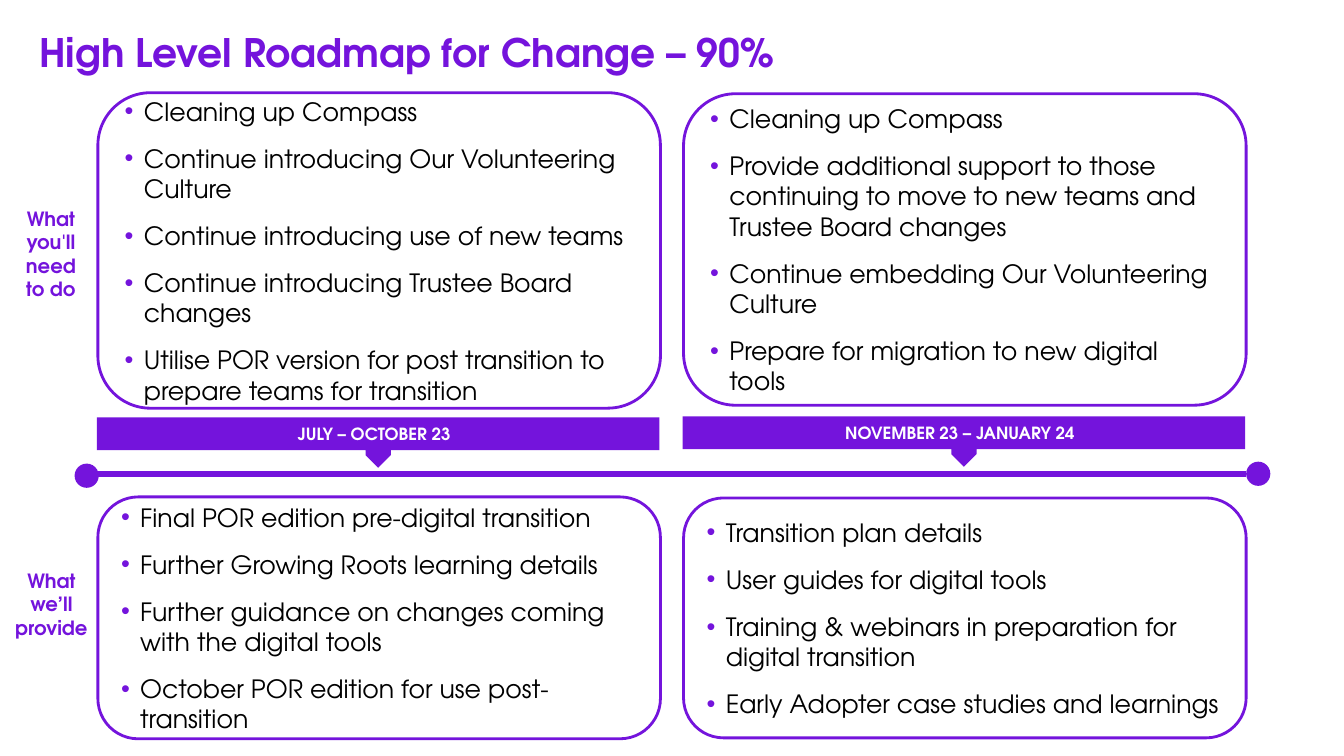
from dataclasses import dataclass

from lxml.etree import SubElement
from pptx import Presentation
from pptx.dml.color import RGBColor
from pptx.enum.shapes import MSO_CONNECTOR, MSO_SHAPE
from pptx.enum.text import MSO_ANCHOR, MSO_AUTO_SIZE, PP_ALIGN
from pptx.oxml.ns import qn
from pptx.util import Inches, Pt

SLIDE_WIDTH = Inches(13.33)
SLIDE_HEIGHT = Inches(7.5)
FONT = "TeX Gyre Adventor"
PURPLE = "7414DC"
HEADING = "7413DC"
BLACK = "000000"
WHITE = "FFFFFF"
COLUMNS = (7.28, 50.86)
COLUMN_WIDTH = 41.86
CORNER_INSET = 0.05


@dataclass(frozen=True)
class Area:
    """Left, top, width and height as percentages of the slide."""

    left: float
    top: float
    width: float
    height: float

    def emu(self) -> tuple[int, int, int, int]:
        return (
            across(self.left),
            down(self.top),
            across(self.width),
            down(self.height),
        )


@dataclass(frozen=True)
class Card:
    column: int
    top: float
    height: float
    items: tuple[str, ...]


@dataclass(frozen=True)
class Period:
    column: int
    top: float
    text: str


@dataclass(frozen=True)
class RowLabel:
    area: Area
    text: str


CARDS = (
    Card(0, 12.27, 41.73, (
        "Cleaning up Compass",
        "Continue introducing Our Volunteering Culture",
        "Continue introducing use of new teams",
        "Continue introducing Trustee Board changes",
        "Utilise POR version for post transition to prepare teams for transition",
    )),
    Card(1, 12.4, 41.2, (
        "Cleaning up Compass",
        "Provide additional support to those continuing to move to new teams "
        "and Trustee Board changes",
        "Continue embedding Our Volunteering Culture",
        "Prepare for migration to new digital tools",
    )),
    Card(0, 65.73, 32, (
        "Final POR edition pre-digital transition",
        "Further Growing Roots learning details",
        "Further guidance on changes coming with the digital tools",
        "October POR edition for use post-transition",
    )),
    Card(1, 65.87, 31.73, (
        "Transition plan details",
        "User guides for digital tools",
        "Training & webinars in preparation for digital transition",
        "Early Adopter case studies and learnings",
    )),
)
PERIODS = (
    Period(0, 55.2, "JULY – OCTOBER 23"),
    Period(1, 55.07, "NOVEMBER 23 – JANUARY 24"),
)
ROW_LABELS = (
    RowLabel(Area(0.15, 26.67, 6.75, 13.87), "What you'll need to do"),
    RowLabel(Area(-0.3, 74.53, 7.73, 10.8), "What we’ll provide"),
)
TIMELINE_ENDS = (Area(5.55, 61.33, 1.8, 3.2), Area(92.72, 61.07, 1.8, 3.2))


def across(share: float) -> int:
    return round(SLIDE_WIDTH * share / 100)


def down(share: float) -> int:
    return round(SLIDE_HEIGHT * share / 100)


def rgb(value: str) -> RGBColor:
    return RGBColor.from_string(value)


def place(shape, area: Area) -> None:
    shape.left, shape.top, shape.width, shape.height = area.emu()


def format_runs(paragraph, size: float, color: str, bold: bool) -> None:
    for run in paragraph.runs:
        run.font.name = FONT
        run.font.size = Pt(size)
        run.font.bold = bold
        run.font.color.rgb = rgb(color)


def indent(paragraph, margin: float, first_line: float = 0):
    properties = paragraph._p.get_or_add_pPr()
    properties.set("marL", str(Inches(margin)))
    properties.set("indent", str(Inches(first_line)))
    return properties


def add_bullet(paragraph) -> None:
    properties = indent(paragraph, 0.2, -0.19)
    color = SubElement(properties, qn("a:buClr"))
    SubElement(color, qn("a:srgbClr"), val=PURPLE)
    SubElement(properties, qn("a:buChar"), char="•")


def add_solid(slide, kind: MSO_SHAPE, area: Area):
    shape = slide.shapes.add_shape(kind, *area.emu())
    shape.shadow.inherit = False
    shape.fill.solid()
    shape.fill.fore_color.rgb = rgb(PURPLE)
    shape.line.fill.background()
    return shape


def draw_title(slide) -> None:
    title = slide.shapes.title
    place(title, Area(1.65, 3.07, 74.57, 7.6))
    frame = title.text_frame
    frame.text = "High Level Roadmap for Change – 90%"
    frame.auto_size = MSO_AUTO_SIZE.NONE
    frame.vertical_anchor = MSO_ANCHOR.MIDDLE
    heading = frame.paragraphs[0]
    indent(heading, 0.07)
    heading.alignment = PP_ALIGN.LEFT
    heading.space_before = Pt(0)
    format_runs(heading, 28, HEADING, True)


def draw_card(slide, body, card: Card) -> None:
    area = Area(COLUMNS[card.column], card.top, COLUMN_WIDTH, card.height)
    outline = slide.shapes.add_shape(MSO_SHAPE.ROUNDED_RECTANGLE, *area.emu())
    outline.shadow.inherit = False
    outline.fill.background()
    outline.line.color.rgb = rgb(PURPLE)
    outline.line.width = Pt(2)

    place(body, area)
    frame = body.text_frame
    frame.text = "\n".join(card.items)
    frame.auto_size = MSO_AUTO_SIZE.NONE
    frame.vertical_anchor = MSO_ANCHOR.MIDDLE
    frame.margin_left = frame.margin_right = round(
        Inches(0.1) + down(card.height) * CORNER_INSET
    )
    frame.margin_top = frame.margin_bottom = 0
    for index, item in enumerate(frame.paragraphs):
        add_bullet(item)
        item.alignment = PP_ALIGN.LEFT
        item.space_before = Pt(6 if index else 0)
        item.space_after = Pt(6 if index < len(card.items) - 1 else 0)
        format_runs(item, 18, BLACK, False)


def draw_period(slide, period: Period) -> None:
    area = Area(COLUMNS[period.column] - 0.07, period.top, COLUMN_WIDTH, 6.67)
    banner = add_solid(slide, MSO_SHAPE.DOWN_ARROW_CALLOUT, area)
    for index, share in enumerate((0.5, 0.25, 0.25, 0.65)):
        banner.adjustments[index] = share
    frame = banner.text_frame
    frame.text = period.text
    frame.margin_left = frame.margin_top = frame.margin_bottom = 0
    frame.margin_right = Inches(0.08)
    frame.vertical_anchor = MSO_ANCHOR.MIDDLE
    frame.paragraphs[0].alignment = PP_ALIGN.CENTER
    format_runs(frame.paragraphs[0], 12, WHITE, True)


def draw_timeline(slide) -> None:
    height = down(62.67)
    timeline = slide.shapes.add_connector(
        MSO_CONNECTOR.STRAIGHT, across(5.93), height, across(92.72), height
    )
    timeline.line.color.rgb = rgb(PURPLE)
    timeline.line.width = Pt(4.5)
    SubElement(timeline._element.spPr, qn("a:effectLst"))
    for end in TIMELINE_ENDS:
        add_solid(slide, MSO_SHAPE.FLOWCHART_CONNECTOR, end)


def draw_row_label(slide, label: RowLabel) -> None:
    frame = slide.shapes.add_textbox(*label.area.emu()).text_frame
    frame.text = label.text
    frame.word_wrap = True
    indent(frame.paragraphs[0], 0.07)
    frame.paragraphs[0].alignment = PP_ALIGN.CENTER
    format_runs(frame.paragraphs[0], 14, HEADING, True)


def main() -> None:
    deck = Presentation()
    deck.slide_width = SLIDE_WIDTH
    deck.slide_height = SLIDE_HEIGHT
    slide = deck.slides.add_slide(deck.slide_layouts.get_by_name("Comparison"))
    draw_title(slide)
    bodies = list(slide.placeholders)[1:]
    for body, card in zip(bodies, CARDS):
        draw_card(slide, body, card)
    for period in PERIODS:
        draw_period(slide, period)
    draw_timeline(slide)
    for label in ROW_LABELS:
        draw_row_label(slide, label)
    deck.save("out.pptx")


if __name__ == "__main__":
    main()
